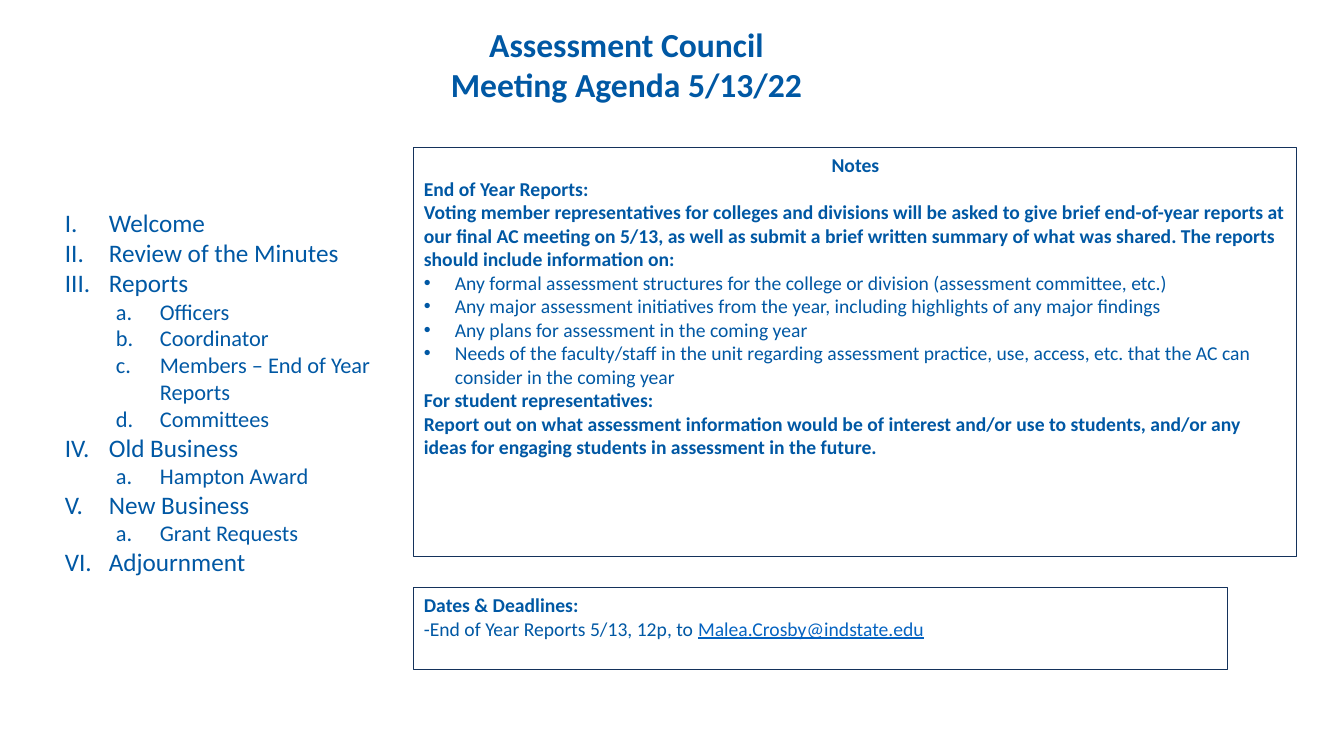
from lxml.etree import SubElement
from pptx import Presentation
from pptx.dml.color import RGBColor
from pptx.enum.shapes import MSO_SHAPE
from pptx.enum.text import MSO_ANCHOR, PP_ALIGN
from pptx.oxml.ns import qn
from pptx.util import Emu, Pt

BLUE = RGBColor(0x00, 0x58, 0xA4)
NAVY = RGBColor(0x14, 0x32, 0x5B)
LINK_BLUE = RGBColor(0x05, 0x63, 0xC1)
FONT = "Calibri"
EMU_PER_PX = 914400 / 100.8

AGENDA = [
    ("Welcome", []),
    ("Review of the Minutes", []),
    ("Reports", ["Officers", "Coordinator", "Members – End of Year Reports", "Committees"]),
    ("Old Business", ["Hampton Award"]),
    ("New Business", ["Grant Requests"]),
    ("Adjournment", []),
]
NOTES_INTRO = [
    "End of Year Reports:",
    "Voting member representatives for colleges and divisions will be asked to give brief "
    "end-of-year reports at our final AC meeting on 5/13, as well as submit a brief written "
    "summary of what was shared. The reports should include information on:",
]
REPORT_TOPICS = [
    "Any formal assessment structures for the college or division (assessment committee, etc.)",
    "Any major assessment initiatives from the year, including highlights of any major findings",
    "Any plans for assessment in the coming year",
    "Needs of the faculty/staff in the unit regarding assessment practice, use, access, etc. "
    "that the AC can consider in the coming year",
]
STUDENT_NOTES = [
    "For student representatives:",
    "Report out on what assessment information would be of interest and/or use to students, "
    "and/or any ideas for engaging students in assessment in the future.",
]


def px(length):
    return Emu(round(length * EMU_PER_PX))


def prepare_frame(shape):
    text_frame = shape.text_frame
    text_frame.word_wrap = True
    text_frame.vertical_anchor = MSO_ANCHOR.TOP
    return text_frame


def add_text_box(slide, *box):
    return prepare_frame(slide.shapes.add_textbox(*map(px, box)))


def add_outlined_box(slide, *box):
    shape = slide.shapes.add_shape(MSO_SHAPE.RECTANGLE, *map(px, box))
    shape.shadow.inherit = False
    shape.fill.background()
    shape.line.color.rgb = NAVY
    shape.line.width = Pt(0.75)
    return prepare_frame(shape)


def format_font(font, size, bold=False, color=BLUE):
    font.name = FONT
    font.size = Pt(size)
    font.bold = bold
    font.color.rgb = color


def add_paragraph(text_frame, text, size, bold=False, align=PP_ALIGN.LEFT):
    first = text_frame.paragraphs[0]
    paragraph = text_frame.add_paragraph() if first.runs else first
    paragraph.text = text
    paragraph.alignment = align
    format_font(paragraph.runs[0].font, size, bold)
    return paragraph


def set_marker(paragraph, left, hanging, tag, **attributes):
    properties = paragraph._p.get_or_add_pPr()
    properties.set("marL", str(px(left)))
    properties.set("indent", str(-px(hanging)))
    SubElement(properties, qn("a:buFont"), typeface="Arial" if tag == "a:buChar" else "+mj-lt")
    SubElement(properties, qn(tag), **attributes)


def add_agenda(slide):
    text_frame = add_text_box(slide, 55, 202, 332, 383)
    for topic, subtopics in AGENDA:
        paragraph = add_paragraph(text_frame, topic, 18)
        set_marker(paragraph, 44, 44, "a:buAutoNum", type="romanUcPeriod")
        for subtopic in subtopics:
            paragraph = add_paragraph(text_frame, subtopic, 16)
            paragraph.level = 1
            set_marker(paragraph, 95, 44, "a:buAutoNum", type="alphaLcPeriod")


def add_title(slide):
    text_frame = add_text_box(slide, 414, 19, 425, 92)
    for line in ("Assessment Council", "Meeting Agenda 5/13/22"):
        add_paragraph(text_frame, line, 24, True, PP_ALIGN.CENTER)


def add_notes_box(slide):
    text_frame = add_outlined_box(slide, 414, 148, 883, 409)
    add_paragraph(text_frame, "Notes", 14, True, PP_ALIGN.CENTER)
    for text in NOTES_INTRO:
        add_paragraph(text_frame, text, 14, True)
    for topic in REPORT_TOPICS:
        paragraph = add_paragraph(text_frame, topic, 14)
        set_marker(paragraph, 31, 31, "a:buChar", char="•")
    for text in STUDENT_NOTES:
        add_paragraph(text_frame, text, 14, True)


def add_deadlines_box(slide):
    text_frame = add_outlined_box(slide, 414, 588, 814, 82)
    add_paragraph(text_frame, "Dates & Deadlines:", 14, True)
    paragraph = add_paragraph(text_frame, "-End of Year Reports 5/13, 12p, to ", 14)
    address = paragraph.add_run()
    address.text = "Malea.Crosby@indstate.edu"
    format_font(address.font, 14, color=LINK_BLUE)
    address.font.underline = True


def main():
    presentation = Presentation()
    presentation.slide_width = px(1344)
    presentation.slide_height = px(756)
    slide = presentation.slides.add_slide(presentation.slide_layouts[6])
    add_agenda(slide)
    add_title(slide)
    add_notes_box(slide)
    add_deadlines_box(slide)
    presentation.save("out.pptx")


if __name__ == "__main__":
    main()
